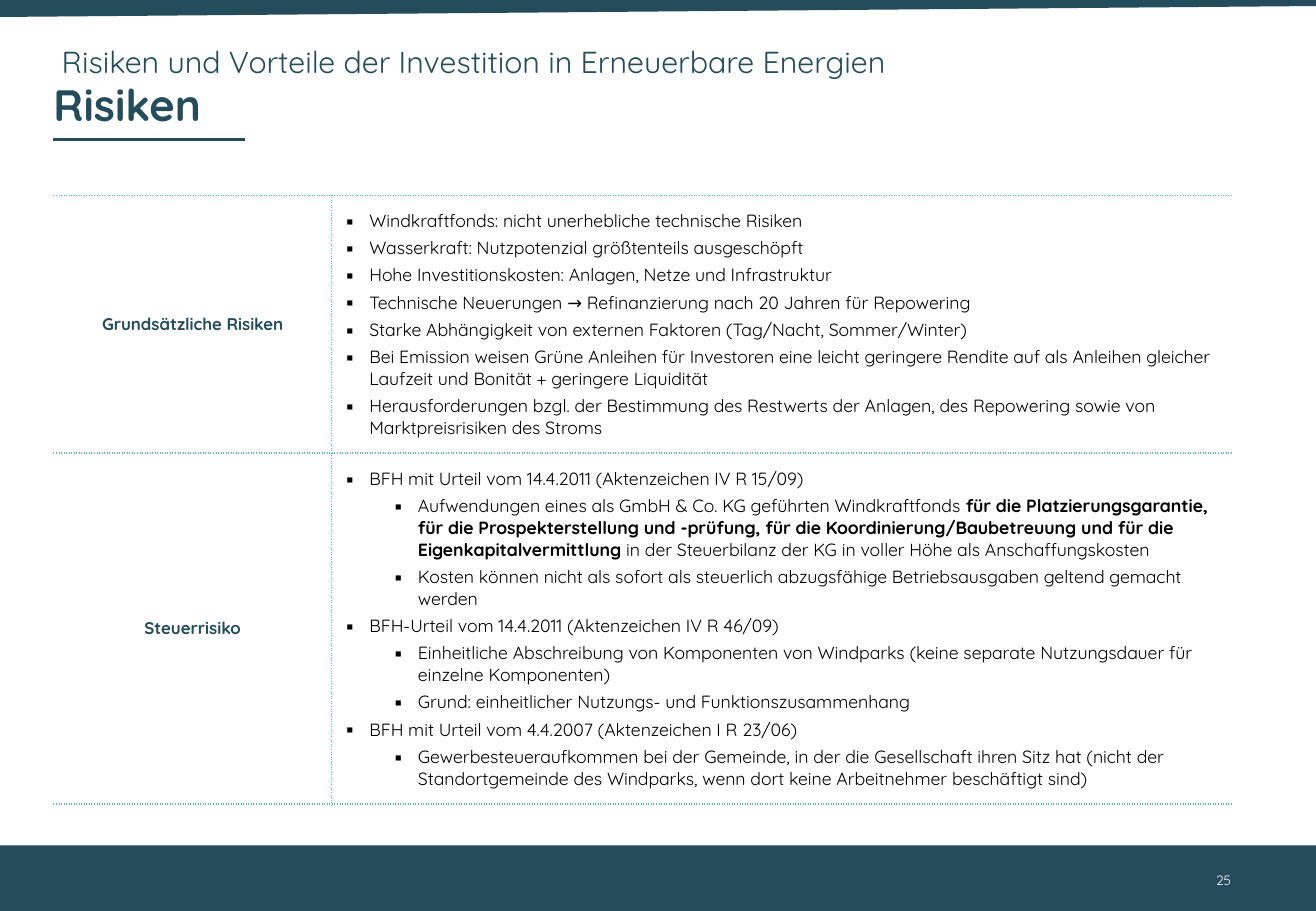
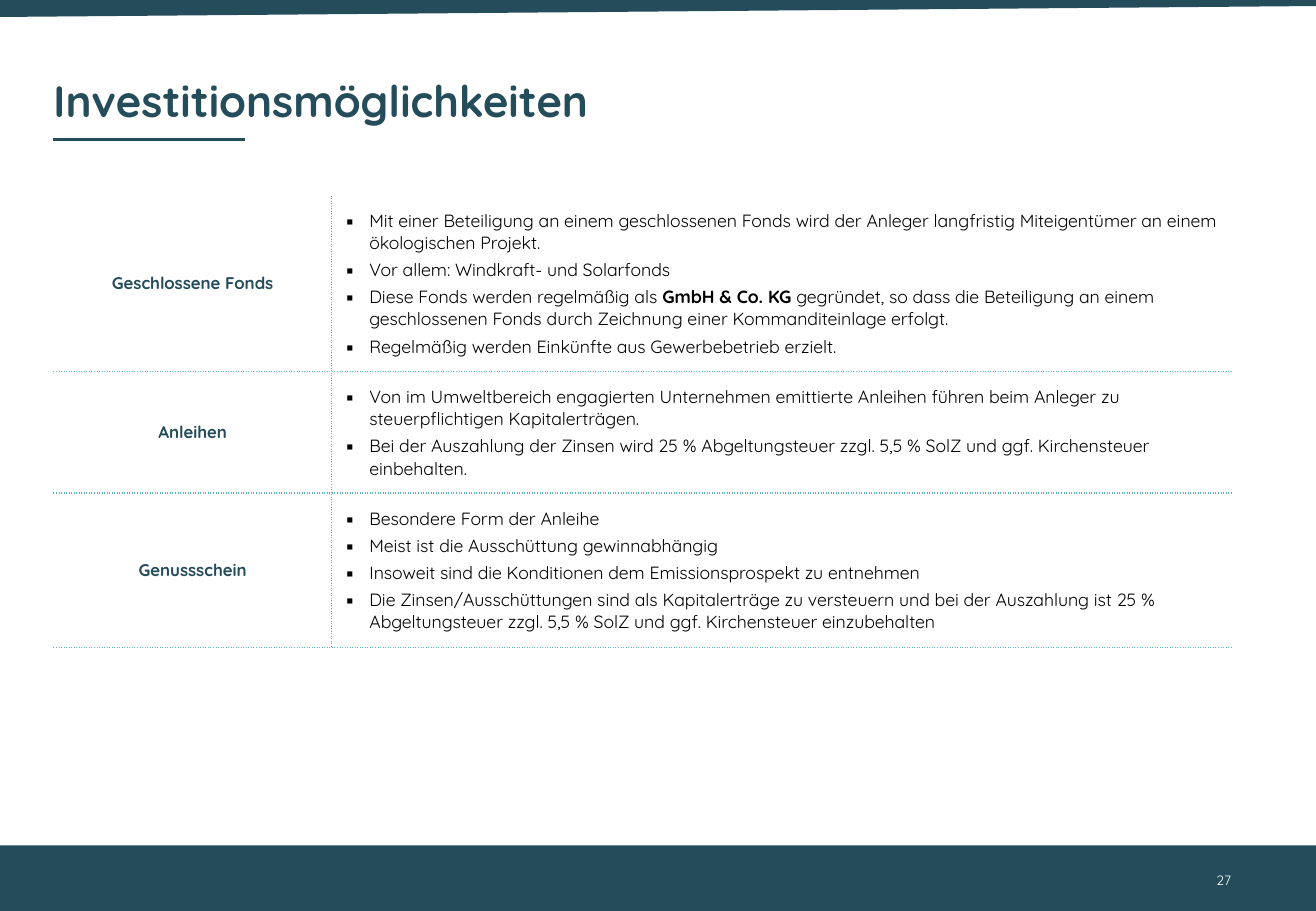
from dataclasses import dataclass
from typing import Optional

from lxml import etree
from pptx import Presentation
from pptx import util as u
from pptx.dml.color import RGBColor
from pptx.enum import shapes, text
from pptx.oxml import ns

FONT = "Quicksand"
PETROL = RGBColor(0x24, 0x4C, 0x5A)
TEAL = RGBColor(0x58, 0xB6, 0xC0)
BLACK = RGBColor(0, 0, 0)
WHITE = RGBColor(0xFF, 0xFF, 0xFF)

# Page grid, in inches
WIDTH, HEIGHT = 10.83, 7.5
LEFT, RIGHT = 0.44, 10.14
LABEL_WIDTH = 2.29
TABLE_TOP = 1.61
FOOTER_TOP = 6.96
TITLE_TOP = 0.39
KICKER_HEIGHT = 0.27
PADDING = 0.12
BULLET_INDENT = 0.19
LEVEL_STEP = 0.4


@dataclass(frozen=True)
class Item:
    """A bullet; parts between ** marks are bold."""
    text: str
    level: int = 0


@dataclass(frozen=True)
class Row:
    label: str
    height: float
    items: tuple[Item, ...]


@dataclass(frozen=True)
class Page:
    number: int
    heading: str
    rows: tuple[Row, ...]
    kicker: Optional[str] = None
    top_rule: bool = True


PAGES = (
    Page(25, "Risiken", kicker=" Risiken und Vorteile der Investition in Erneuerbare Energien", rows=(
        Row("Grundsätzliche Risiken", 2.12, (
            Item("Windkraftfonds: nicht unerhebliche technische Risiken"),
            Item("Wasserkraft: Nutzpotenzial größtenteils ausgeschöpft"),
            Item("Hohe Investitionskosten: Anlagen, Netze und Infrastruktur"),
            Item("Technische Neuerungen → Refinanzierung nach 20 Jahren für Repowering"),
            Item("Starke Abhängigkeit von externen Faktoren (Tag/Nacht, Sommer/Winter)"),
            Item("Bei Emission weisen Grüne Anleihen für Investoren eine leicht geringere Rendite auf "
                 "als Anleihen gleicher Laufzeit und Bonität + geringere Liquidität"),
            Item("Herausforderungen bzgl. der Bestimmung des Restwerts der Anlagen, des Repowering "
                 "sowie von Marktpreisrisiken des Stroms"),
        )),
        Row("Steuerrisiko", 2.89, (
            Item("BFH mit Urteil vom 14.4.2011 (Aktenzeichen IV R 15/09)"),
            Item("Aufwendungen eines als GmbH & Co. KG geführten Windkraftfonds **für die "
                 "Platzierungsgarantie, für die Prospekterstellung und -prüfung, für die "
                 "Koordinierung/Baubetreuung und für die Eigenkapitalvermittlung** in der "
                 "Steuerbilanz der KG in voller Höhe als Anschaffungskosten", 1),
            Item("Kosten können nicht als sofort als steuerlich abzugsfähige Betriebsausgaben "
                 "geltend gemacht werden", 1),
            Item("BFH-Urteil vom 14.4.2011 (Aktenzeichen IV R 46/09)"),
            Item("Einheitliche Abschreibung von Komponenten von Windparks (keine separate "
                 "Nutzungsdauer für einzelne Komponenten)", 1),
            Item("Grund: einheitlicher Nutzungs- und Funktionszusammenhang", 1),
            Item("BFH mit Urteil vom 4.4.2007 (Aktenzeichen I R 23/06)"),
            Item("Gewerbesteueraufkommen bei der Gemeinde, in der die Gesellschaft ihren Sitz hat "
                 "(nicht der Standortgemeinde des Windparks, wenn dort keine Arbeitnehmer "
                 "beschäftigt sind)", 1),
        )),
    )),
    Page(27, "Investitionsmöglichkeiten", top_rule=False, rows=(
        Row("Geschlossene Fonds", 1.45, (
            Item("Mit einer Beteiligung an einem geschlossenen Fonds wird der Anleger langfristig "
                 "Miteigentümer an einem ökologischen Projekt."),
            Item("Vor allem: Windkraft- und Solarfonds"),
            Item("Diese Fonds werden regelmäßig als **GmbH & Co. KG **gegründet, so dass die "
                 "Beteiligung an einem geschlossenen Fonds durch Zeichnung einer "
                 "Kommanditeinlage erfolgt."),
            Item("Regelmäßig werden Einkünfte aus Gewerbebetrieb erzielt."),
        )),
        Row("Anleihen", 1.0, (
            Item("Von im Umweltbereich engagierten Unternehmen emittierte Anleihen führen beim "
                 "Anleger zu steuerpflichtigen Kapitalerträgen."),
            Item("Bei der Auszahlung der Zinsen wird 25 % Abgeltungsteuer zzgl. 5,5 % SolZ und "
                 "ggf. Kirchensteuer einbehalten."),
        )),
        Row("Genussschein", 1.27, (
            Item("Besondere Form der Anleihe"),
            Item("Meist ist die Ausschüttung gewinnabhängig"),
            Item("Insoweit sind die Konditionen dem Emissionsprospekt zu entnehmen"),
            Item("Die Zinsen/Ausschüttungen sind als Kapitalerträge zu versteuern und bei der "
                 "Auszahlung ist 25 % Abgeltungsteuer zzgl. 5,5 % SolZ und ggf. Kirchensteuer "
                 "einzubehalten"),
        )),
    )),
)


def write(frame, content: str, *, size: float, color: RGBColor, bold: bool = False,
          align=text.PP_ALIGN.LEFT, spacing: float = 1.0, before: float = 0,
          bullet_level: Optional[int] = None) -> None:
    """Append a paragraph to the frame; ** marks switch bold on and off."""
    first = not frame.paragraphs[0].runs
    para = frame.paragraphs[0] if first else frame.add_paragraph()
    if bullet_level is not None:
        para.level = bullet_level
        props = para._p.get_or_add_pPr()
        props.set("marL", str(u.Inches(BULLET_INDENT + bullet_level * LEVEL_STEP)))
        props.set("indent", str(-u.Inches(BULLET_INDENT)))
        etree.SubElement(props, ns.qn("a:buFont"), typeface=FONT)
        etree.SubElement(props, ns.qn("a:buChar"), char="▪")
    para.alignment = align
    para.line_spacing = spacing
    para.space_before = u.Pt(0 if first else before)
    for index, part in enumerate(content.split("**")):
        span = para.add_run()
        span.text = part
        span.font.name, span.font.size = FONT, u.Pt(size)
        span.font.bold = bold or index % 2 == 1
        span.font.color.rgb = color


def add_text_box(page, left: float, top: float, width: float, height: float, *,
                 inset: float = 0, anchor=text.MSO_ANCHOR.TOP):
    box = page.shapes.add_textbox(*map(u.Inches, (left, top, width, height)))
    frame = box.text_frame
    frame.word_wrap = True
    frame.vertical_anchor = anchor
    frame.margin_left = frame.margin_right = u.Inches(inset)
    frame.margin_top = frame.margin_bottom = u.Inches(inset / 2)
    return frame


def paint(shape) -> None:
    """Give a band its plain petrol fill."""
    shape.shadow.inherit = False
    shape.fill.solid()
    shape.fill.fore_color.rgb = PETROL
    shape.line.fill.background()


def draw_frame(page, number: int) -> None:
    """Draw the top wedge, title rule, footer band and page number."""
    wedge = page.shapes.build_freeform(0, 0)
    corners = ((WIDTH, 0), (WIDTH, 0.05), (0, 0.14))
    wedge.add_line_segments([(u.Inches(x), u.Inches(y)) for x, y in corners], close=True)
    paint(wedge.convert_to_shape())

    rule = page.shapes.add_connector(shapes.MSO_CONNECTOR.STRAIGHT,
                                     *map(u.Inches, (LEFT, 1.15, 2.02, 1.15)))
    rule.line.color.rgb = PETROL
    rule.line.width = u.Pt(1.5)
    etree.SubElement(rule._element.spPr, ns.qn("a:effectLst"))

    paint(page.shapes.add_shape(shapes.MSO_SHAPE.RECTANGLE, 0, u.Inches(FOOTER_TOP),
                                u.Inches(WIDTH), u.Inches(HEIGHT - FOOTER_TOP)))
    write(add_text_box(page, 9.82, 7.05, 0.41, 0.4, inset=0.1, anchor=text.MSO_ANCHOR.MIDDLE),
          str(number), size=8, color=WHITE, align=text.PP_ALIGN.RIGHT)


def draw_title(page, heading: str, kicker: Optional[str]) -> None:
    top = TITLE_TOP if kicker else TITLE_TOP + KICKER_HEIGHT
    frame = add_text_box(page, LEFT, top, RIGHT - LEFT, 1.09 - top)
    if kicker:
        write(frame, kicker, size=18, color=PETROL, spacing=0.9)
    write(frame, heading, size=26, color=PETROL, bold=True, spacing=0.9, before=2)


def set_borders(cell, dotted: set[str]) -> None:
    """Dot the named edges (L, R, T, B) and clear the others."""
    props = cell._tc.get_or_add_tcPr()
    for index, edge in enumerate("LRTB"):
        line = etree.Element(ns.qn(f"a:ln{edge}"), w=str(u.Pt(1)))
        if edge in dotted:
            fill = etree.SubElement(line, ns.qn("a:solidFill"))
            etree.SubElement(fill, ns.qn("a:srgbClr"), val=str(TEAL))
            etree.SubElement(line, ns.qn("a:prstDash"), val="sysDot")
        else:
            etree.SubElement(line, ns.qn("a:noFill"))
        props.insert(index, line)


def draw_table(page, rows: tuple[Row, ...], top_rule: bool) -> None:
    width = RIGHT - LEFT
    height = sum(row.height for row in rows)
    table = page.shapes.add_table(len(rows), 2, *map(u.Inches, (LEFT, TABLE_TOP, width, height))).table
    table.first_row = table.horz_banding = False
    for column, share in zip(table.columns, (LABEL_WIDTH, width - LABEL_WIDTH)):
        column.width = u.Inches(share)
    for index, row in enumerate(rows):
        table.rows[index].height = u.Inches(row.height)
        label, body = table.cell(index, 0), table.cell(index, 1)
        for cell, inner_edge in ((label, "R"), (body, "L")):
            cell.fill.background()
            cell.vertical_anchor = text.MSO_ANCHOR.MIDDLE
            cell.margin_left = cell.margin_right = u.Inches(PADDING)
            cell.margin_top = cell.margin_bottom = u.Inches(PADDING)
            set_borders(cell, {inner_edge, "B"} | ({"T"} if index or top_rule else set()))
        write(label.text_frame, row.label, size=10, color=PETROL, bold=True,
              align=text.PP_ALIGN.CENTER)
        for item in row.items:
            write(body.text_frame, item.text, size=10.5, color=BLACK, before=3,
                  bullet_level=item.level)


def main() -> None:
    deck = Presentation()
    deck.slide_width, deck.slide_height = u.Inches(WIDTH), u.Inches(HEIGHT)
    for content in PAGES:
        page = deck.slides.add_slide(deck.slide_layouts[6])
        draw_frame(page, content.number)
        draw_title(page, content.heading, content.kicker)
        draw_table(page, content.rows, content.top_rule)
    deck.save("out.pptx")


if __name__ == "__main__":
    main()
